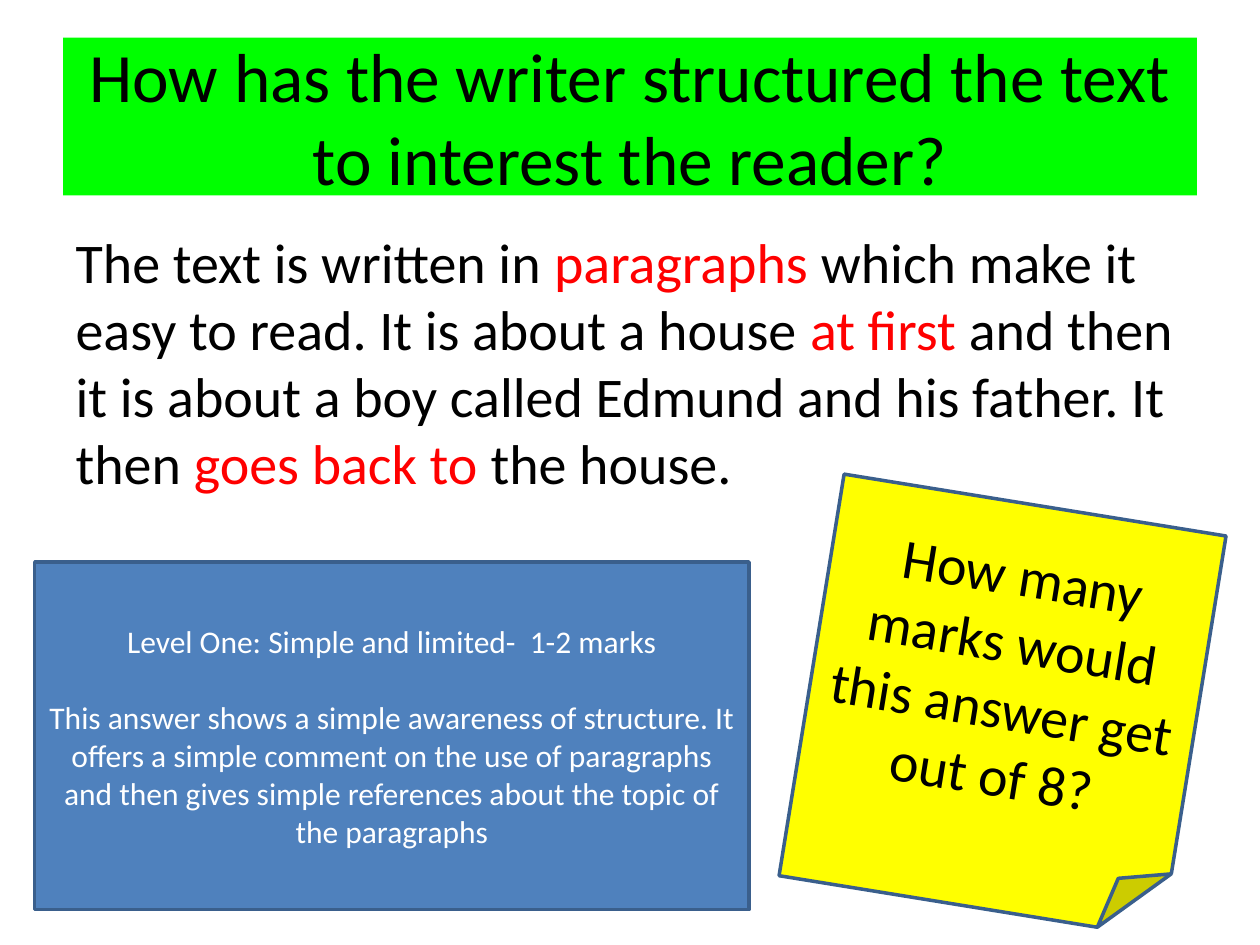
from lxml import etree
from pptx import Presentation
from pptx import util as u
from pptx.dml import color
from pptx.enum import shapes, text
from pptx.oxml import ns

BLACK, WHITE, RED = "000000", "FFFFFF", "FF0000"
CENTRED = {"alignment": text.PP_ALIGN.CENTER}


def rgb(value):
    return color.RGBColor.from_string(value)


def set_values(target, values):
    for name, value in values.items():
        setattr(target, name, value)


def place(shape, box):
    names = ("left", "top", "width", "height")
    set_values(shape, {name: u.Cm(length) for name, length in zip(names, box)})


def paint(shape, fill, line=None):
    shape.fill.solid()
    shape.fill.fore_color.rgb = rgb(fill)
    if line:
        shape.line.color.rgb = rgb(line)
        shape.line.width = u.Pt(2)


def write_paragraph(paragraph, runs, size, paragraph_format):
    set_values(paragraph, paragraph_format)
    for words, font_color in runs:
        run = paragraph.add_run()
        run.text = words
        set_values(run.font, {"name": "Calibri", "size": u.Pt(size)})
        run.font.color.rgb = rgb(font_color)


def prepare_frame(shape, anchor):
    frame = shape.text_frame
    set_values(frame, {"word_wrap": True, "auto_size": text.MSO_AUTO_SIZE.NONE,
                       "vertical_anchor": anchor})
    return frame


def fill_title(slide, box, words):
    title = slide.shapes.title
    place(title, box)
    paint(title, "00FF00")
    frame = prepare_frame(title, text.MSO_ANCHOR.MIDDLE)
    write_paragraph(frame.paragraphs[0], [(words, BLACK)], 39.6, CENTRED)


def fill_answer(slide, box, runs):
    body = slide.placeholders[1]
    place(body, box)
    paragraph = prepare_frame(body, text.MSO_ANCHOR.TOP).paragraphs[0]
    write_paragraph(paragraph, runs, 32, {"alignment": text.PP_ALIGN.LEFT})
    properties = paragraph._p.get_or_add_pPr()
    properties.set("marL", "0")
    properties.set("indent", "0")
    etree.SubElement(properties, ns.qn("a:buNone"))


def add_panel(slide, box, kind, fill, font_color, size, paragraphs, gap=0, rotation=0):
    panel = slide.shapes.add_shape(kind, *(u.Cm(length) for length in box))
    panel.rotation = rotation
    panel.shadow.inherit = False
    paint(panel, fill, "3A5F8C")
    frame = prepare_frame(panel, text.MSO_ANCHOR.MIDDLE)
    for index, words in enumerate(paragraphs):
        paragraph = frame.add_paragraph() if index else frame.paragraphs[0]
        spacing = {"space_before": u.Pt(gap if index else 0)}
        write_paragraph(paragraph, [(words, font_color)], size, {**CENTRED, **spacing})


def build_slide(presentation):
    slide = presentation.slides.add_slide(presentation.slide_layouts[1])
    fill_title(slide, (1.27, 0.76, 22.86, 3.18),
               "How has the writer structured the text to interest the reader?")
    fill_answer(slide, (1.27, 4.45, 22.86, 12.57), [
        ("The text is written in ", BLACK),
        ("paragraphs", RED),
        (" which make it easy to read. It is about a house ", BLACK),
        ("at first ", RED),
        ("and then it is about a boy called Edmund and his father. It then ", BLACK),
        ("goes back to ", RED),
        ("the house.", BLACK),
    ])
    add_panel(slide, (16.31, 10.13, 7.8, 8.2), shapes.MSO_SHAPE.FOLDED_CORNER,
              "FFFF00", BLACK, 32,
              ["How many marks would this answer get out of 8?"], rotation=9.2)
    add_panel(slide, (0.7, 11.33, 14.4, 7.01), shapes.MSO_SHAPE.RECTANGLE,
              "4F81BD", WHITE, 18,
              ["Level One: Simple and limited-  1-2 marks",
               "This answer shows a simple awareness of structure. It offers a simple "
               "comment on the use of paragraphs and then gives simple references "
               "about the topic of the paragraphs"], gap=22)


def main():
    presentation = Presentation()
    set_values(presentation, {"slide_width": u.Cm(25.4), "slide_height": u.Cm(19.05)})
    build_slide(presentation)
    presentation.save("out.pptx")


if __name__ == "__main__":
    main()
